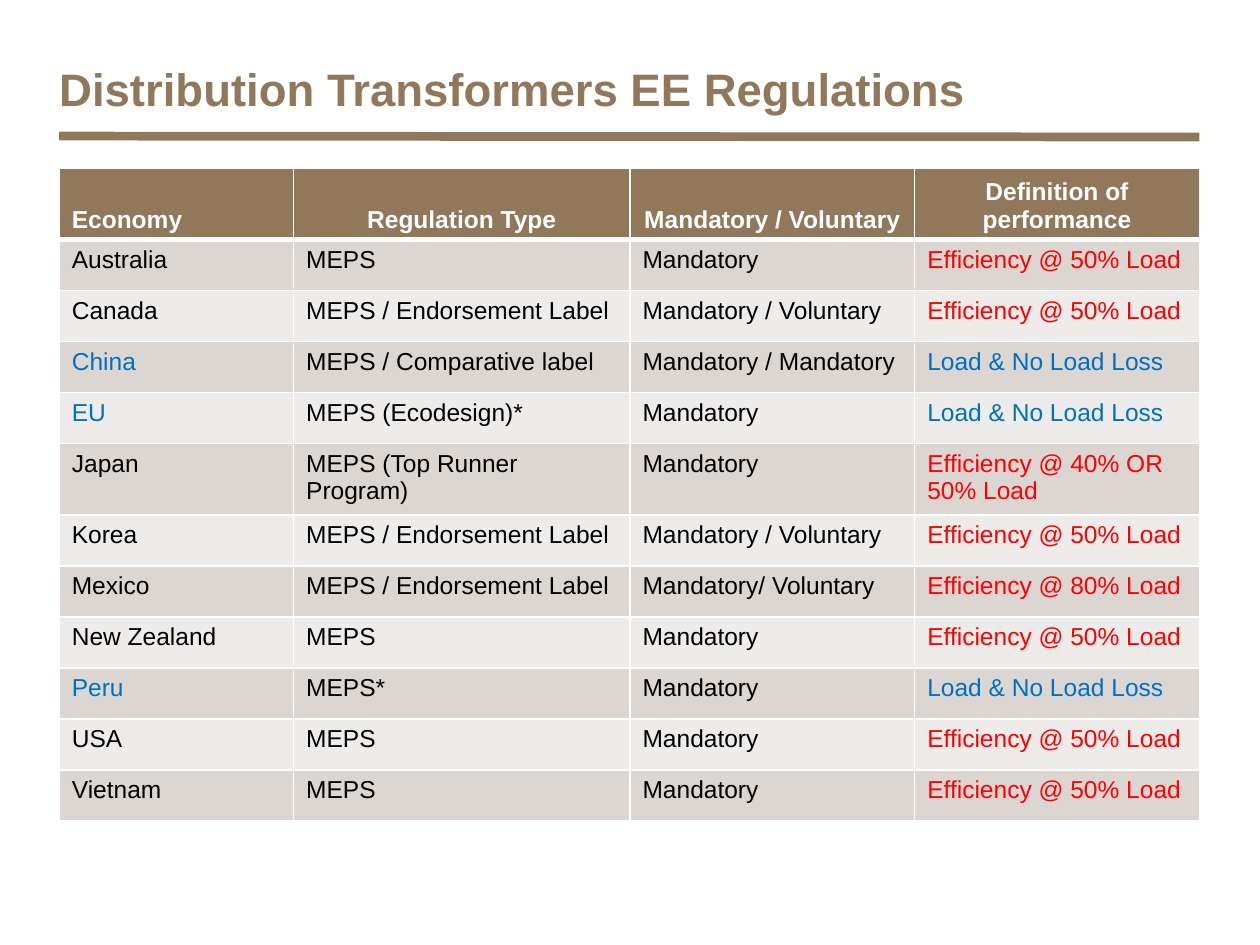
import dataclasses

import lxml.etree
import pptx
import pptx.dml.color
import pptx.enum.shapes
import pptx.enum.text
import pptx.oxml
import pptx.oxml.ns
import pptx.slide
import pptx.table
import pptx.text.text
import pptx.util

SLIDE_WIDTH = pptx.util.Inches(10)
SLIDE_HEIGHT = pptx.util.Inches(7.5)
COLORS = {
    "brown": "91785B",
    "white": "FFFFFF",
    "black": "000000",
    "red": "FF0000",
    "blue": "0070C0",
    "dark_band": "DCD6D2",
    "light_band": "EEECEA",
}
FONT = "Arial"
LEFT = 0.047
COLUMN_SHARES = (0.186, 0.267, 0.226, 0.226)
TABLE_TOP = 0.178
ROW_SHARE = 0.054
HEADINGS = ("Economy", "Regulation Type", "Mandatory / Voluntary", "Definition of performance")


@dataclasses.dataclass(frozen=True)
class Regulation:
    economy: str
    kind: str = "MEPS"
    status: str = "Mandatory"
    performance: str = "Efficiency @ 50% Load"

    @property
    def loss_based(self) -> bool:
        return self.performance == LOSSES


LOSSES = "Load & No Load Loss"
ENDORSEMENT = "MEPS / Endorsement Label"
REGULATIONS = (
    Regulation("Australia"),
    Regulation("Canada", ENDORSEMENT, "Mandatory / Voluntary"),
    Regulation("China", "MEPS / Comparative label", "Mandatory / Mandatory", LOSSES),
    Regulation("EU", "MEPS (Ecodesign)*", performance=LOSSES),
    Regulation("Japan", "MEPS (Top Runner Program)", performance="Efficiency @ 40% OR 50% Load"),
    Regulation("Korea", ENDORSEMENT, "Mandatory / Voluntary"),
    Regulation("Mexico", ENDORSEMENT, "Mandatory/ Voluntary", "Efficiency @ 80% Load"),
    Regulation("New Zealand"),
    Regulation("Peru", "MEPS*", performance=LOSSES),
    Regulation("USA"),
    Regulation("Vietnam"),
)


def across(share: float) -> int:
    return round(SLIDE_WIDTH * share)


def down(share: float) -> int:
    return round(SLIDE_HEIGHT * share)


def rgb(name: str) -> pptx.dml.color.RGBColor:
    return pptx.dml.color.RGBColor.from_string(COLORS[name])


def style_paragraph(paragraph: pptx.text.text._Paragraph, size: float, color: str, bold: bool) -> None:
    paragraph.font.name = FONT
    paragraph.font.size = pptx.util.Pt(size)
    paragraph.font.bold = bold
    paragraph.font.color.rgb = rgb(color)


def draw_title(slide: pptx.slide.Slide, text: str) -> None:
    shape = slide.shapes.add_textbox(across(LEFT), down(0.059), across(0.848), down(0.077))
    frame = shape.text_frame
    frame.word_wrap = True
    frame.margin_left = frame.margin_right = frame.margin_bottom = 0
    frame.margin_top = pptx.util.Inches(0.04)
    frame.text = text
    style_paragraph(frame.paragraphs[0], 26, "brown", True)


def draw_rule(slide: pptx.slide.Slide) -> None:
    rule = slide.shapes.add_connector(
        pptx.enum.shapes.MSO_CONNECTOR.STRAIGHT,
        across(LEFT), down(0.144), across(0.952), down(0.145),
    )
    rule.line.color.rgb = rgb("brown")
    rule.line.width = pptx.util.Pt(5)
    lxml.etree.SubElement(rule._element.spPr, pptx.oxml.ns.qn("a:effectLst"))


def set_borders(cell: pptx.table._Cell, top: float, bottom: float) -> None:
    properties = cell._tc.get_or_add_tcPr()
    for side, width in (("L", 1), ("R", 1), ("T", top), ("B", bottom)):
        properties.append(pptx.oxml.parse_xml(
            f'<a:ln{side} {pptx.oxml.ns.nsdecls("a")} w="{pptx.util.Pt(width)}">'
            f'<a:solidFill><a:srgbClr val="{COLORS["white"]}"/></a:solidFill></a:ln{side}>'
        ))


def fill_cell(cell: pptx.table._Cell, text: str, color: str, fill: str, bold: bool = False) -> None:
    cell.fill.solid()
    cell.fill.fore_color.rgb = rgb(fill)
    cell.text = text
    style_paragraph(cell.text_frame.paragraphs[0], 14, color, bold)


def draw_header(table: pptx.table.Table) -> None:
    for column, heading in enumerate(HEADINGS):
        cell = table.cell(0, column)
        set_borders(cell, 1, 3)
        fill_cell(cell, heading, "white", "brown", bold=True)
        cell.vertical_anchor = pptx.enum.text.MSO_ANCHOR.BOTTOM
        if column:
            cell.text_frame.paragraphs[0].alignment = pptx.enum.text.PP_ALIGN.CENTER


def draw_regulation(table: pptx.table.Table, row: int, regulation: Regulation) -> None:
    economy_color, performance_color = ("blue", "blue") if regulation.loss_based else ("black", "red")
    colors = (economy_color, "black", "black", performance_color)
    band = "dark_band" if row % 2 else "light_band"
    for column, (text, color) in enumerate(zip(dataclasses.astuple(regulation), colors)):
        cell = table.cell(row, column)
        set_borders(cell, 3 if row == 1 else 1, 1)
        fill_cell(cell, text, color, band)


def draw_table(slide: pptx.slide.Slide) -> None:
    row_count = len(REGULATIONS) + 1
    table = slide.shapes.add_table(
        row_count, len(HEADINGS), across(LEFT), down(TABLE_TOP),
        across(sum(COLUMN_SHARES)), down(ROW_SHARE * row_count),
    ).table
    for column, share in zip(table.columns, COLUMN_SHARES):
        column.width = across(share)
    for row in table.rows:
        row.height = down(ROW_SHARE)
    draw_header(table)
    for row, regulation in enumerate(REGULATIONS, start=1):
        draw_regulation(table, row, regulation)


def main() -> None:
    presentation = pptx.Presentation()
    presentation.slide_width = SLIDE_WIDTH
    presentation.slide_height = SLIDE_HEIGHT
    slide = presentation.slides.add_slide(presentation.slide_layouts[6])
    draw_rule(slide)
    draw_title(slide, "Distribution Transformers EE Regulations")
    draw_table(slide)
    presentation.save("out.pptx")


if __name__ == "__main__":
    main()
